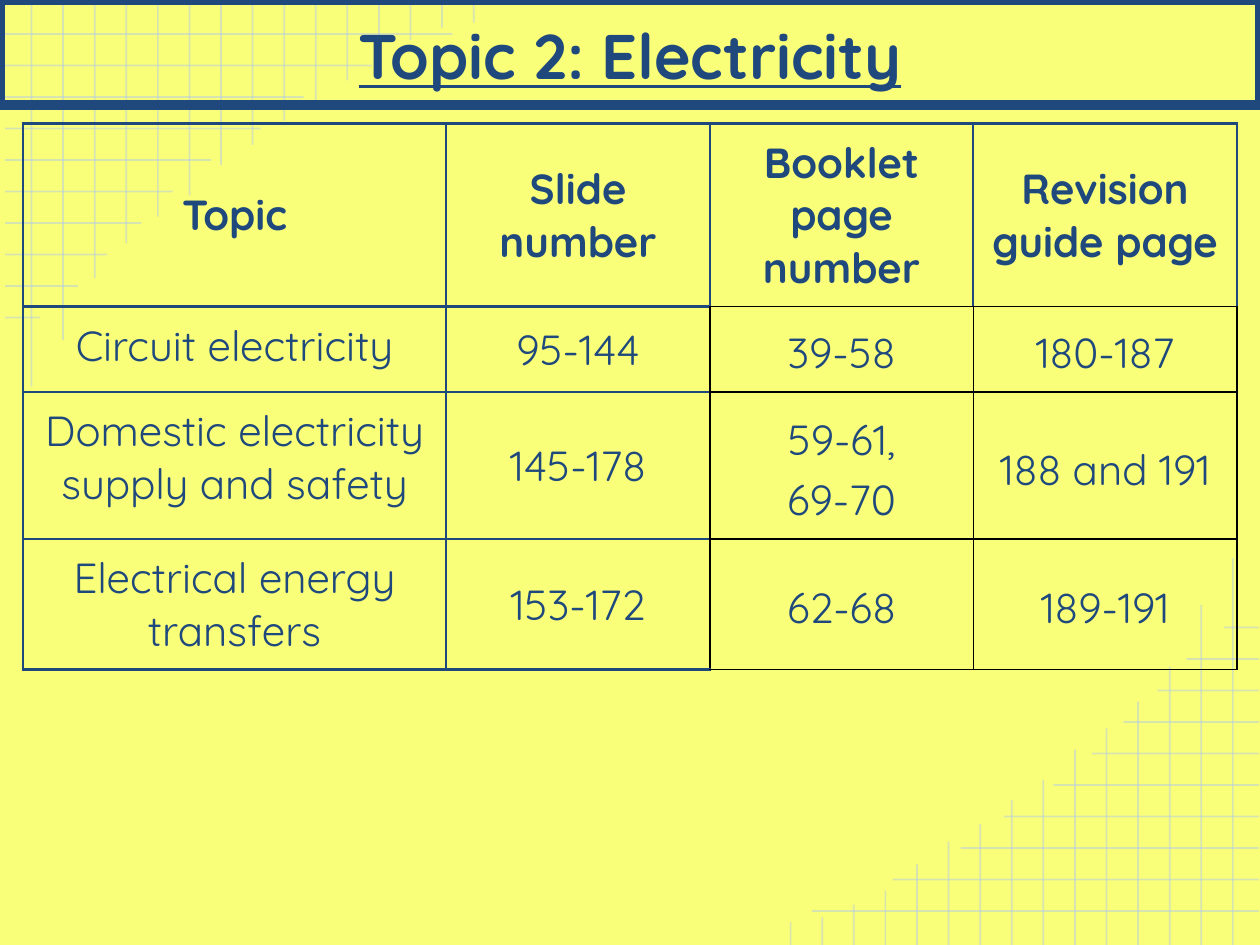
from typing import NamedTuple

import lxml.etree
import pptx
import pptx.dml.color
import pptx.enum.shapes
import pptx.enum.text
import pptx.oxml
import pptx.oxml.ns
import pptx.util

Pt = pptx.util.Pt
qn = pptx.oxml.ns.qn
Align = pptx.enum.text.PP_ALIGN
Anchor = pptx.enum.text.MSO_ANCHOR

FONT = "Quicksand"
NAVY, PALE, BLACK, YELLOW = "1F497D", "B7CCE4", "000000", "FAFF79"
WIDE, HIGH = 720, 540
STEP = 18


class Line(NamedTuple):
    x1: float
    y1: float
    x2: float
    y2: float


class Row(NamedTuple):
    high: float
    texts: tuple[str, ...]


ROWS = [
    Row(104, ("Topic", "Slide number", "Booklet page number", "Revision guide page")),
    Row(49, ("Circuit electricity", "95-144", "39-58", "180-187")),
    Row(84, ("Domestic electricity supply and safety", "145-178",
             "59-61,\n69-70", "188 and 191")),
    Row(74, ("Electrical energy transfers", "153-172", "62-68", "189-191")),
]
COLS = (242, 150.6, 150.6, 150.6)

# Far ends of the corner grid lines
ACROSS = (258.5, 212.4, 173.5, 149, 120.5, 98.6, 80.6, 61.2, 44.6, 23)
DOWN = (221, 194.4, 159, 139, 123.8, 111.6, 94.3, 82.8, 69, 59, 46, 31, 23, 15.8, 13)


def color(code: str) -> pptx.dml.color.RGBColor:
    return pptx.dml.color.RGBColor.from_string(code)


def style(para, size: float, bold: bool) -> None:
    para.alignment = Align.CENTER
    font = para.font
    font.name, font.size, font.bold = FONT, Pt(size), bold
    font.color.rgb = color(NAVY)


def draw_line(slide, line: Line) -> None:
    link = slide.shapes.add_connector(
        pptx.enum.shapes.MSO_CONNECTOR.STRAIGHT, *(Pt(v) for v in line))
    link.line.width = Pt(1)
    link.line.color.rgb = color(PALE)
    tint = link.line.fill._xPr.find(".//" + qn("a:srgbClr"))
    lxml.etree.SubElement(tint, qn("a:alpha"), val="53000")
    lxml.etree.SubElement(link._element.spPr, qn("a:effectLst"))


def draw_grids(slide) -> None:
    lines = [Line(3, 19.4 + STEP * i, end, 19.4 + STEP * i)
             for i, end in enumerate(ACROSS)]
    lines += [Line(STEP + 18.05 * i, end, STEP + 18.05 * i, 0)
              for i, end in enumerate(DOWN)]
    for a, b, c, d in lines:
        draw_line(slide, Line(a, b, c, d))
        # Same grid, turned half round into the other corner
        draw_line(slide, Line(722.5 - a, HIGH - b, 722.5 - c, HIGH - d))


def draw_title(slide, text: str) -> None:
    box = slide.shapes.add_shape(
        pptx.enum.shapes.MSO_SHAPE.RECTANGLE, 0, 0, Pt(WIDE), Pt(60))
    box.shadow.inherit = False
    box.fill.background()
    box.line.color.rgb = color(NAVY)
    box.line.width = Pt(6)
    frame = box.text_frame
    frame.word_wrap = True
    frame.vertical_anchor = Anchor.BOTTOM
    frame.margin_left = frame.margin_right = Pt(7.2)
    frame.margin_top = frame.margin_bottom = Pt(7.2)
    frame.text = text
    style(frame.paragraphs[0], 36, True)
    frame.paragraphs[0].font.underline = True


def add_edge(cell, side: str, code: str, width: float, place: int) -> None:
    edge = pptx.oxml.parse_xml(
        f'<a:ln{side} xmlns:a="http://schemas.openxmlformats.org/drawingml/2006/main" '
        f'w="{Pt(width)}"><a:solidFill><a:srgbClr val="{code}"/></a:solidFill></a:ln{side}>')
    cell._tc.get_or_add_tcPr().insert(place, edge)


def fill_cell(cell, text: str, row: int, col: int) -> None:
    head, plain = row == 0, row > 0 and col > 1
    cell.fill.background()
    cell.vertical_anchor = Anchor.TOP if not head and col == 0 else Anchor.MIDDLE
    cell.margin_left = cell.margin_right = Pt(5 if plain else 7.2)
    cell.margin_top = cell.margin_bottom = Pt(7.2)
    cell.text = text
    for para in cell.text_frame.paragraphs:
        style(para, 24, head)
        if plain:
            para.line_spacing = 1.15
    # Black edges wherever a cell meets the lower right block
    dark = {"R": not head and col > 0, "B": col > 1, "L": plain, "T": plain}
    for place, side in enumerate("LRTB"):
        code, width = (BLACK, 1) if dark[side] else (NAVY, 1.5)
        add_edge(cell, side, code, width, place)


def draw_table(slide) -> None:
    table = slide.shapes.add_table(
        len(ROWS), len(COLS), Pt(13), Pt(70.6),
        Pt(sum(COLS)), Pt(sum(row.high for row in ROWS))).table
    table.first_row = table.horz_banding = False
    for col, wide in enumerate(COLS):
        table.columns[col].width = Pt(wide)
    for r, row in enumerate(ROWS):
        table.rows[r].height = Pt(row.high)
        for c, text in enumerate(row.texts):
            fill_cell(table.cell(r, c), text, r, c)


def main() -> None:
    deck = pptx.Presentation()
    deck.slide_width, deck.slide_height = Pt(WIDE), Pt(HIGH)
    slide = deck.slides.add_slide(deck.slide_layouts[6])
    slide.background.fill.solid()
    slide.background.fill.fore_color.rgb = color(YELLOW)
    draw_grids(slide)
    draw_title(slide, "Topic 2: Electricity")
    draw_table(slide)
    deck.save("out.pptx")


if __name__ == "__main__":
    main()
